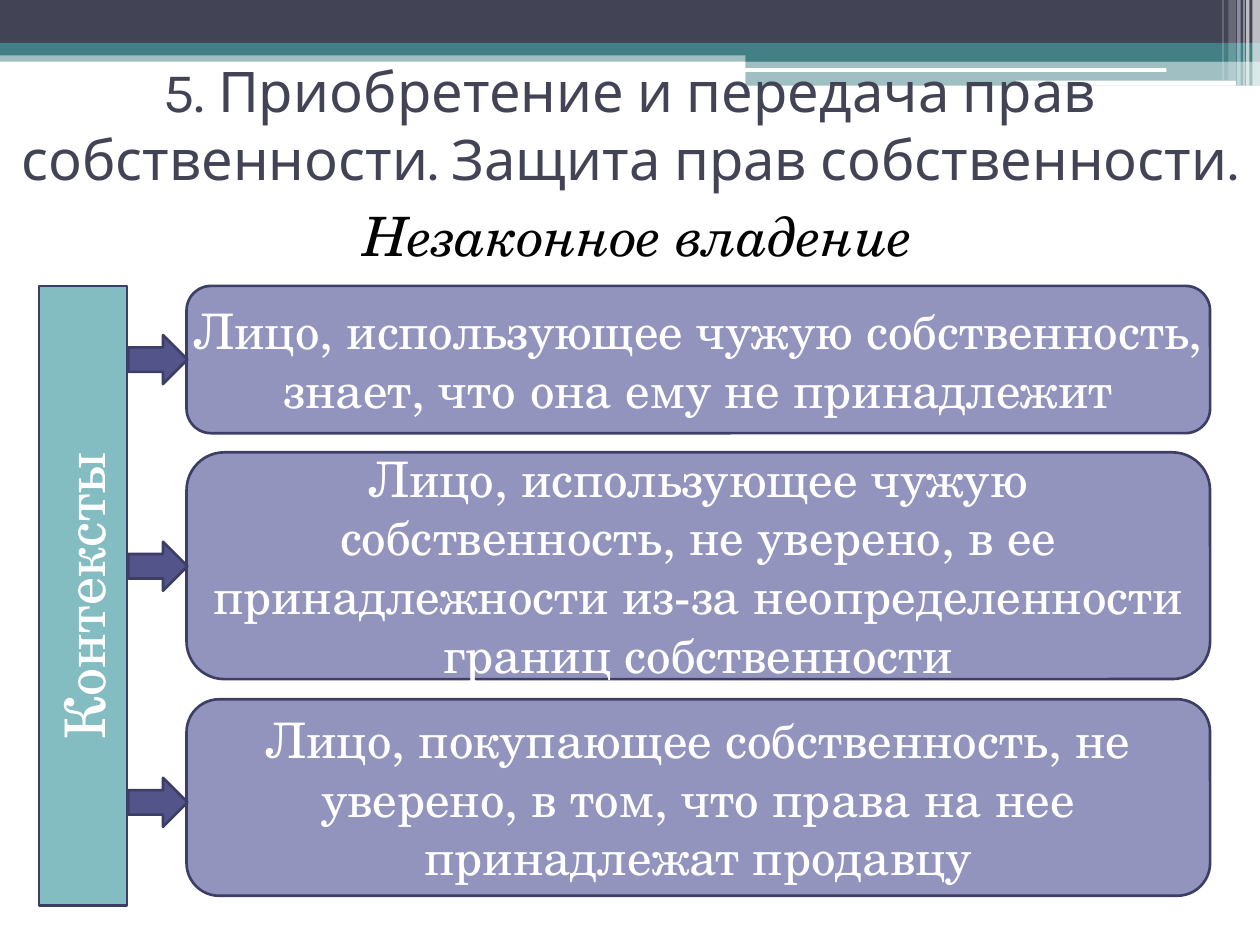
from pptx import Presentation
from pptx.dml.color import RGBColor
from pptx.enum import shapes, text
from pptx.oxml import ns, xmlchemy
from pptx.util import Pt

WHITE = RGBColor(0xFF, 0xFF, 0xFF)
BLACK = RGBColor(0, 0, 0)
SLATE = RGBColor(0x42, 0x44, 0x56)
TEAL = RGBColor(0x43, 0x80, 0x86)
AQUA = RGBColor(0x83, 0xBC, 0xC1)
LILAC = RGBColor(0x93, 0x94, 0xBE)
INDIGO = RGBColor(0x53, 0x54, 0x8A)
EDGE = RGBColor(0x3D, 0x3E, 0x66)
SERIF = "TeX Gyre Schola"
KIND = shapes.MSO_SHAPE


def block(kind, place, fill, alpha=100, edge=False):
    """Add a shape at place (left, top, width, height in points); alpha in percent."""
    shape = slide.shapes.add_shape(kind, *[Pt(n) for n in place])
    shape.shadow.inherit = False
    shape.fill.solid()
    shape.fill.fore_color.rgb = fill
    if alpha < 100:
        color = shape.fill._xPr.find(".//" + ns.qn("a:srgbClr"))
        xmlchemy.OxmlElement("a:alpha")
        node = color.makeelement(ns.qn("a:alpha"), {"val": str(alpha * 1000)})
        color.append(node)
    if edge:
        shape.line.color.rgb = EDGE
        shape.line.width = Pt(1.5)
    else:
        shape.line.fill.background()
    return shape


def write(shape, words, size, color, name=SERIF, anchor=text.MSO_ANCHOR.MIDDLE):
    frame = shape.text_frame
    frame.word_wrap = True
    frame.auto_size = text.MSO_AUTO_SIZE.NONE
    frame.vertical_anchor = anchor
    frame.text = words
    para = frame.paragraphs[0]
    para.alignment = text.PP_ALIGN.CENTER
    para.font.size = Pt(size)
    para.font.name = name
    para.font.color.rgb = color
    return frame


deck = Presentation()
deck.slide_width, deck.slide_height = Pt(720), Pt(540)
slide = deck.slides.add_slide(deck.slide_layouts[5])

# Header bands
for place, fill, alpha in [
    ((0, 28.8, 720, 6.5), TEAL, 50),
    ((0, 0, 720, 24.5), SLATE, 100),
    ((0, 24.5, 720, 7.2), TEAL, 100),
    ((426, 28, 294, 7.2), TEAL, 100),
    ((426, 34.8, 294, 14.2), TEAL, 50),
]:
    block(KIND.RECTANGLE, place, fill, alpha)
for place in [(425.5, 38.9, 241, 2.2), (580.3, 46.1, 126, 2.9)]:
    block(KIND.ROUNDED_RECTANGLE, place, WHITE)

# Pale stripes in the top right corner
for left, width, height, alpha in [
    (715.7, 4.3, 49, 65),
    (712, 2, 49, 65),
    (710.5, 0.7, 49, 60),
    (707, 2, 49, 40),
    (702, 4.3, 46, 20),
    (698.5, 0.7, 46, 30),
]:
    block(KIND.RECTANGLE, (left, 0, width, height), WHITE, alpha)

# Heading of the diagram
head = slide.shapes.add_textbox(0, Pt(112.3), Pt(720), Pt(410.4))
frame = write(head, "Незаконное владение", 31, BLACK, anchor=text.MSO_ANCHOR.TOP)
frame.margin_left = Pt(16)
frame.paragraphs[0].font.italic = True

# Side bar with upward text
bar = block(KIND.RECTANGLE, (22.3, 163.4, 50.4, 354.2), AQUA, edge=True)
frame = write(bar, "Контексты", 32, WHITE)
frame._txBody.bodyPr.set("vert", "vert270")

# Contexts, each with its arrow
for top, height, tip, inset, words in [
    (163.4, 84.2, 191.5, 0,
     "Лицо, использующее чужую собственность, знает, что она ему не принадлежит"),
    (258.5, 129.6, 309.6, 7.2,
     "Лицо, использующее чужую собственность, не уверено, в ее "
     "принадлежности из-за неопределенности границ собственности"),
    (399.6, 112.3, 444.5, 7.2,
     "Лицо, покупающее собственность, не уверено, в том, что права на нее "
     "принадлежат продавцу"),
]:
    box = block(KIND.ROUNDED_RECTANGLE, (106.6, top, 584.9, height), LILAC, edge=True)
    frame = write(box, words, 28, WHITE)
    frame.margin_left = frame.margin_right = Pt(inset)
    block(KIND.RIGHT_ARROW, (73.4, tip, 33.8, 28), INDIGO, edge=True)

# Title, in front of the bands
title = slide.shapes.title
title.left, title.top, title.width, title.height = 0, Pt(28.8), Pt(720), Pt(84.2)
write(title, "5. Приобретение и передача прав собственности. Защита прав собственности.",
      32, SLATE, "Karla")
title.element.getparent().append(title.element)

deck.save("out.pptx")
